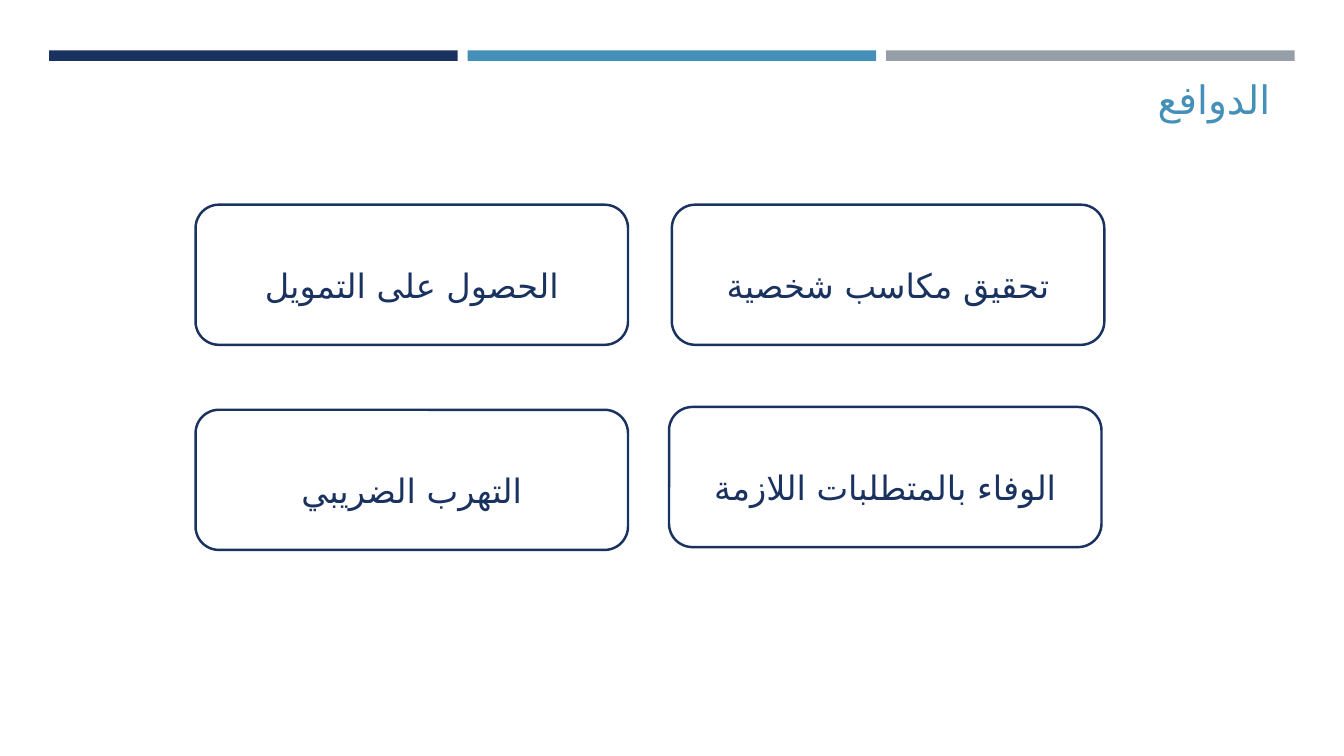
from dataclasses import dataclass
from lxml.etree import SubElement
from pptx import Presentation
from pptx.dml.color import RGBColor
from pptx.enum.shapes import MSO_SHAPE
from pptx.enum.text import MSO_ANCHOR, PP_ALIGN
from pptx.oxml.ns import qn
from pptx.util import Pt


@dataclass(frozen=True)
class Theme:
    """Colours and type of the deck."""
    navy: RGBColor = RGBColor.from_string("1A3260")
    blue: RGBColor = RGBColor.from_string("4590B8")
    gray: RGBColor = RGBColor.from_string("969FA7")
    white: RGBColor = RGBColor.from_string("FFFFFF")
    font: str = "Cabin"
    arabic_font: str = "DejaVu Sans"
    title_size: float = 28
    card_size: float = 24
    card_line: float = 1.75


@dataclass(frozen=True)
class Box:
    """A rectangle in points."""
    left: float
    top: float
    width: float
    height: float

    def lengths(self):
        """Return the four lengths for a new shape."""
        return [Pt(value) for value in (self.left, self.top, self.width, self.height)]


THEME = Theme()


def add_filled_shape(page, kind, box, fill):
    """Add a flat shape without line or shadow."""
    shape = page.shapes.add_shape(kind, *box.lengths())
    shape.shadow.inherit = False
    shape.fill.solid()
    shape.fill.fore_color.rgb = fill
    shape.line.fill.background()
    return shape


def write_paragraph(frame, text, size, color, alignment):
    """Write the single paragraph of a text frame."""
    frame.word_wrap = True
    para = frame.paragraphs[0]
    para.text = text
    para.alignment = alignment
    para.font.size = Pt(size)
    para.font.color.rgb = color
    para.font.name = THEME.font
    properties = para._p.find(".//" + qn("a:defRPr"))
    SubElement(properties, qn("a:cs")).set("typeface", THEME.arabic_font)
    return para


def add_top_bars(page, box, gap=7.2):
    """Split the box into three coloured bars."""
    colors = (THEME.navy, THEME.blue, THEME.gray)
    width = (box.width - gap * (len(colors) - 1)) / len(colors)
    for index, color in enumerate(colors):
        bar = Box(box.left + index * (width + gap), box.top, width, box.height)
        add_filled_shape(page, MSO_SHAPE.RECTANGLE, bar, color)


def add_title(page, box, text):
    """Add the right-to-left title."""
    frame = page.shapes.add_textbox(*box.lengths()).text_frame
    para = write_paragraph(frame, text, THEME.title_size, THEME.blue, PP_ALIGN.RIGHT)
    para._p.get_or_add_pPr().set("rtl", "1")


def add_card(page, box, text):
    """Add one outlined motive card."""
    card = add_filled_shape(page, MSO_SHAPE.ROUNDED_RECTANGLE, box, THEME.white)
    card.line.color.rgb = THEME.navy
    card.line.width = Pt(THEME.card_line)
    frame = card.text_frame
    frame.vertical_anchor = MSO_ANCHOR.MIDDLE
    para = write_paragraph(frame, text, THEME.card_size, THEME.navy, PP_ALIGN.CENTER)
    para.line_spacing = 1.5


def add_motives(page, box, motives, card_width=308.9, card_height=100.1):
    """Place the motive cards at their offsets in the box."""
    for left, top, text in motives:
        add_card(page, Box(box.left + left, box.top + top, card_width, card_height), text)


def main():
    """Build and save the deck."""
    deck = Presentation()
    deck.slide_width, deck.slide_height = Pt(960), Pt(540)
    page = deck.slides.add_slide(deck.slide_layouts[6])
    add_top_bars(page, Box(35.2, 36, 889.6, 7.5))
    add_title(page, Box(46, 50.4, 868.4, 86.4), "الدوافع")
    motives = (
        (340.2, 0, "تحقيق مكاسب شخصية"),
        (338.2, 144.5, "الوفاء بالمتطلبات اللازمة"),
        (0, 0, "الحصول على التمويل"),
        (0, 146.5, "التهرب الضريبي"),
    )
    add_motives(page, Box(139.7, 146.2, 649.1, 246.6), motives)
    deck.save("out.pptx")


if __name__ == "__main__":
    main()
